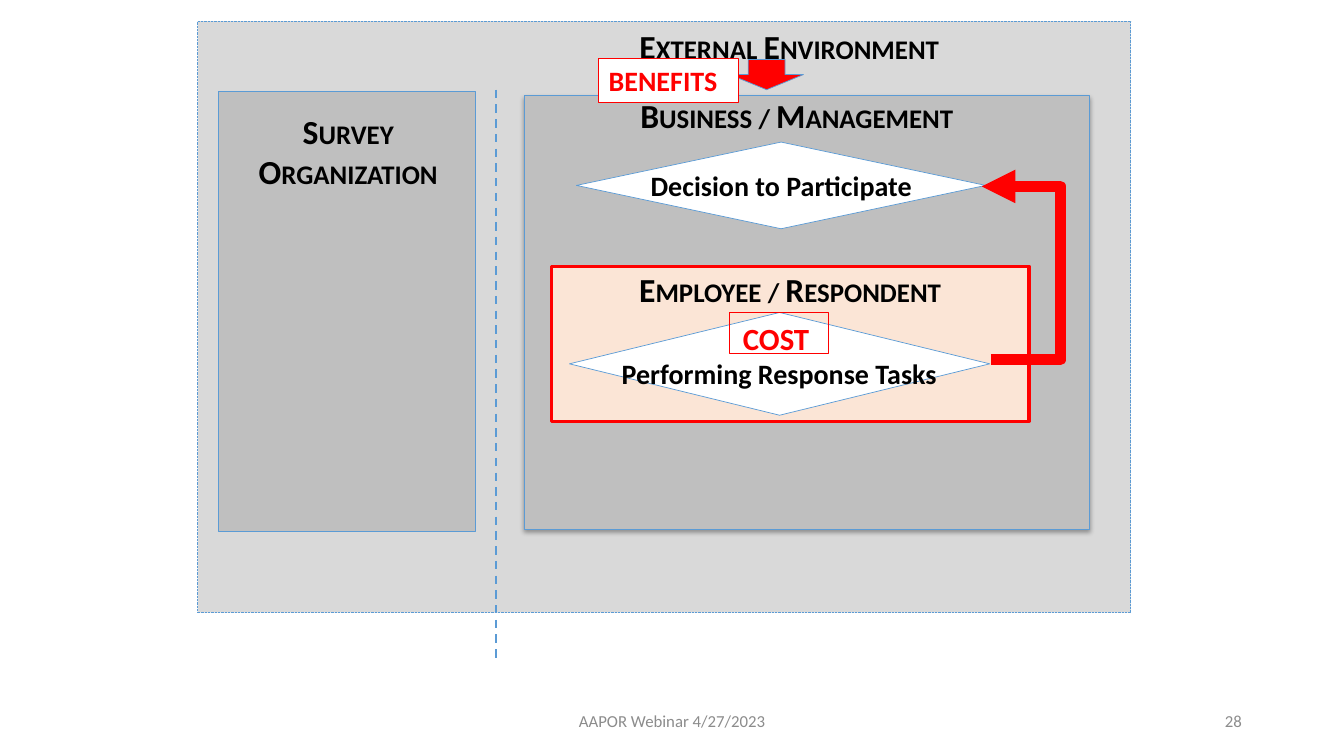
from lxml import etree
from pptx import Presentation
from pptx import util as u
from pptx.dml.color import RGBColor
from pptx.enum import dml, shapes, text
from pptx.oxml.ns import qn

Pt = u.Pt
BLACK = RGBColor(0x00, 0x00, 0x00)
WHITE = RGBColor(0xFF, 0xFF, 0xFF)
RED = RGBColor(0xFF, 0x00, 0x00)
BLUE = RGBColor(0x5B, 0x9B, 0xD5)
LIGHT_GREY = RGBColor(0xD9, 0xD9, 0xD9)
MID_GREY = RGBColor(0xBF, 0xBF, 0xBF)
FOOTER_GREY = RGBColor(0x8C, 0x8C, 0x8C)
PEACH = RGBColor(0xFB, 0xE5, 0xD6)

SHAPE = shapes.MSO_SHAPE
ALIGN = text.PP_ALIGN
ANCHOR = text.MSO_ANCHOR
DASH = dml.MSO_LINE


class Diagram:
    font = "Calibri"

    def __init__(self, slide):
        self.s = slide

    def shape(self, kind, box, fill, line=BLUE, width=0.5, parent=None):
        sp = (parent or self.s).shapes.add_shape(kind, *map(Pt, box))
        sp.shadow.inherit = False
        if fill is None:
            sp.fill.background()
        else:
            sp.fill.solid()
            sp.fill.fore_color.rgb = fill
        sp.line.color.rgb = line
        sp.line.width = Pt(width)
        return sp

    def add_text(self, sp, paragraphs, align=ALIGN.CENTER, anchor=ANCHOR.TOP, small_caps=False):
        """Each paragraph is a list of (text, size, colour, bold) runs."""
        tf = sp.text_frame
        tf.word_wrap = True
        tf.vertical_anchor = anchor
        for i, runs in enumerate(paragraphs):
            p = tf.add_paragraph() if i else tf.paragraphs[0]
            p.alignment = align
            for words, size, color, bold in runs:
                r = p.add_run()
                r.text = words
                r.font.name = self.font
                r.font.size = Pt(size)
                r.font.bold = bold
                r.font.color.rgb = color
                if small_caps:
                    r._r.get_or_add_rPr().set("cap", "small")

    def label(self, box, paragraphs, parent=None, **style):
        sp = (parent or self.s).shapes.add_textbox(*map(Pt, box))
        self.add_text(sp, paragraphs, **style)

    def heading(self, box, words):
        self.label(box, [[(words, 24, BLACK, True)]], small_caps=True)

    def footer(self, box, words, align):
        self.label(box, [[(words, 12, FOOTER_GREY, False)]], align=align, anchor=ANCHOR.MIDDLE)

    def decision(self, diamond_box, text_box, paragraphs):
        group = self.s.shapes.add_group_shape()
        self.shape(SHAPE.DIAMOND, diamond_box, WHITE, parent=group)
        self.label(text_box, paragraphs, parent=group)

    def connector(self, kind, start, end, color, width):
        c = self.s.shapes.add_connector(kind, *map(Pt, start + end))
        c.line.color.rgb = color
        c.line.width = Pt(width)
        etree.SubElement(c._element.spPr, qn("a:effectLst"))
        return c

    def elbow_arrow(self, start, end, bend_x, color, width):
        c = self.connector(shapes.MSO_CONNECTOR.ELBOW, start, end, color, width)
        bend = (bend_x - start[0]) / (end[0] - start[0])
        spPr = c._element.spPr
        guides = spPr.find(qn("a:prstGeom")).get_or_add_avLst()
        etree.SubElement(guides, qn("a:gd"), name="adj1", fmla=f"val {round(bend * 100000)}")
        etree.SubElement(spPr.find(qn("a:ln")), qn("a:tailEnd"), type="triangle")

    def drop_shadow(self, sp, blur, distance, opacity):
        effects = sp._element.spPr.find(qn("a:effectLst"))
        shadow = etree.SubElement(effects, qn("a:outerShdw"), blurRad=str(int(Pt(blur))),
                                  dist=str(int(Pt(distance))), dir="5400000", rotWithShape="0")
        color = etree.SubElement(shadow, qn("a:srgbClr"), val=str(BLACK))
        etree.SubElement(color, qn("a:alpha"), val=str(opacity * 1000))


def main():
    prs = Presentation()
    prs.slide_width, prs.slide_height = Pt(960), Pt(540)
    d = Diagram(prs.slides.add_slide(prs.slide_layouts[6]))

    # External environment and the divider
    external = d.shape(SHAPE.RECTANGLE, (141.1, 15.1, 666.7, 422.6), LIGHT_GREY)
    external.line.dash_style = DASH.ROUND_DOT
    divider = d.connector(shapes.MSO_CONNECTOR.STRAIGHT, (354.2, 64.1), (354.2, 472.3), BLUE, 1.5)
    divider.line.dash_style = DASH.DASH
    d.heading((391.7, 15.1, 344.2, 36.7), "External Environment")

    # Survey organization
    d.shape(SHAPE.RECTANGLE, (156.2, 65.5, 183.6, 313.9), MID_GREY)
    d.heading((157.7, 75.6, 182.2, 65.5), "Survey Organization")

    # Business and its employee
    business = d.shape(SHAPE.RECTANGLE, (374.4, 68.4, 403.9, 309.6), MID_GREY)
    d.drop_shadow(business, blur=3.1, distance=1.8, opacity=35)
    d.shape(SHAPE.RECTANGLE, (393.8, 190.1, 341.3, 110.9), PEACH, RED, 2.25)
    d.heading((406.1, 64.1, 326.2, 36.7), "Business / Management")
    d.heading((393.8, 188.6, 341.3, 36.7), "Employee / Respondent")

    # Decisions and the feedback arrow
    d.decision((406.8, 223.2, 300.2, 73.4), (427.7, 224.6, 257.8, 58.3),
               [[("COST", 22, RED, True), (" ", 20, BLACK, True)],
                [("Performing Response Tasks", 20, BLACK, True)]])
    d.decision((411.8, 101.5, 292.3, 61.9), (450, 116.6, 216, 31.7),
               [[("Decision to Participate", 20, BLACK, True)]])
    d.elbow_arrow((707.8, 257), (701.3, 133.2), 757.6, RED, 8)

    # Benefits and cost markers
    d.shape(SHAPE.DOWN_ARROW, (521.3, 42.5, 52.6, 21.6), RED)
    benefits = d.shape(SHAPE.RECTANGLE, (427.7, 41.8, 99.9, 31.5), WHITE, RED, 0.75)
    d.add_text(benefits, [[("BENEFITS", 20, RED, True)]], align=ALIGN.LEFT)
    d.shape(SHAPE.RECTANGLE, (521.3, 223.2, 70.6, 29.5), None, RED, 1)

    # Footer
    d.footer((318.2, 500.4, 324, 28.8), "AAPOR Webinar 4/27/2023", ALIGN.CENTER)
    d.footer((678.2, 500.4, 216, 28.8), "28", ALIGN.RIGHT)

    prs.save("out.pptx")


if __name__ == "__main__":
    main()
